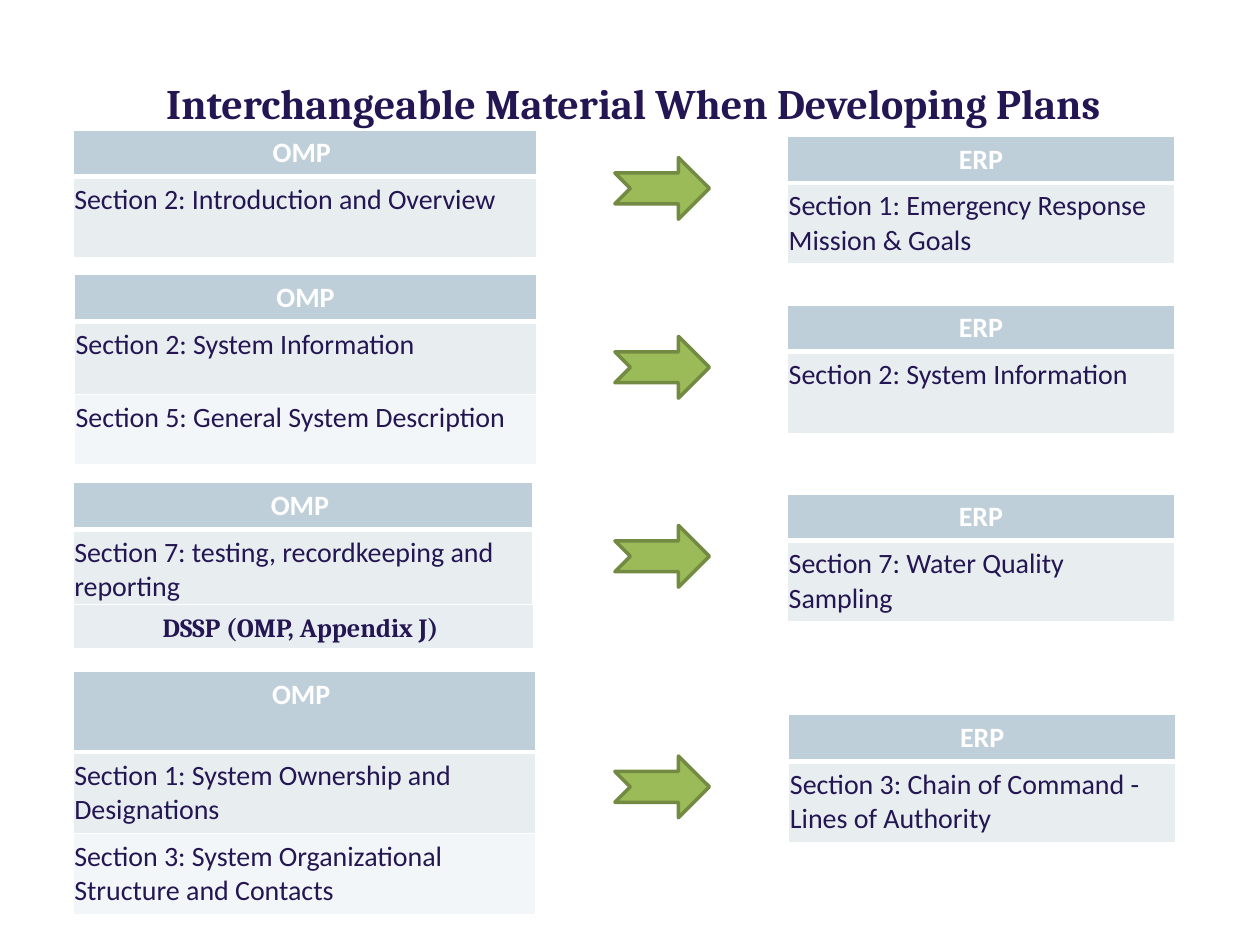
import pptx
import pptx.dml.color
import pptx.enum.shapes
import pptx.enum.text
import pptx.oxml
import pptx.oxml.ns
import pptx.util

Inches = pptx.util.Inches
Pt = pptx.util.Pt
CENTER = pptx.enum.text.PP_ALIGN.CENTER
SHAPES = pptx.enum.shapes.MSO_SHAPE

COLORS = {
    "ink": "241652",
    "white": "FFFFFF",
    "header": "BFCFD9",
    "band_dark": "E8EDF0",
    "band_light": "F3F6F8",
    "appendix": "E8EDF1",
    "arrow": "9BBB59",
    "arrow_line": "738A42",
}
THIN, THICK = 0.96, 3

PLAN_TABLES = [
    (6.25, 1.08, 3.07, [0.33, 0.64],
     ["ERP", "Section 1: Emergency Response Mission & Goals"]),
    (0.58, 1.03, 3.68, [0.33, 0.64],
     ["OMP ", "Section 2: Introduction and Overview"]),
    (0.59, 2.18, 3.67, [0.32, 0.58, 0.56],
     ["OMP", "Section 2: System Information",
      "Section 5: General System Description"]),
    (6.25, 2.42, 3.07, [0.33, 0.65],
     ["ERP", "Section 2: System Information"]),
    (0.58, 3.83, 3.65, [0.33, 0.64],
     ["OMP ", "Section 7: testing, recordkeeping and reporting"]),
    (6.25, 3.92, 3.07, [0.33, 0.64],
     ["ERP", "Section 7: Water Quality Sampling"]),
    (0.58, 5.33, 3.67, [0.64, 0.64, 0.63],
     ["OMP ", "Section 1: System Ownership and Designations",
      "Section 3: System Organizational Structure and Contacts"]),
    (6.26, 5.67, 3.07, [0.32, 0.54],
     ["ERP", "Section 3: Chain of Command - Lines of Authority"]),
]
ARROW_TOPS = [1.25, 2.67, 4.17, 6]


def rgb(name):
    return pptx.dml.color.RGBColor.from_string(COLORS[name])


def paint(item, color):
    item.fill.solid()
    item.fill.fore_color.rgb = rgb(color)


def write(frame, text, font, size, color, bold, align=None):
    frame.text = text
    para = frame.paragraphs[0]
    para.alignment = align
    span = para.runs[0].font
    span.name, span.size, span.bold = font, Pt(size), bold
    span.color.rgb = rgb(color)


def set_borders(cell, top, bottom):
    properties = cell._tc.get_or_add_tcPr()
    widths = [("lnL", THIN), ("lnR", THIN), ("lnT", top), ("lnB", bottom)]
    for position, (side, width) in enumerate(widths):
        properties.insert(position, pptx.oxml.parse_xml(
            f'<a:{side} {pptx.oxml.ns.nsdecls("a")} w="{int(Pt(width))}">'
            f'<a:solidFill><a:srgbClr val="{COLORS["white"]}"/></a:solidFill>'
            f'</a:{side}>'))


def add_plan_table(page, left, top, width, heights, texts):
    table = page.shapes.add_table(
        len(texts), 1, Inches(left), Inches(top),
        Inches(width), Inches(sum(heights))).table
    table.first_row = table.horz_banding = False
    fills = ["header", "band_dark", "band_light"]
    for index, (height, text) in enumerate(zip(heights, texts)):
        table.rows[index].height = Inches(height)
        cell = table.cell(index, 0)
        cell.margin_left = cell.margin_right = Inches(0.01)
        cell.margin_top = cell.margin_bottom = Inches(0.05)
        header = index == 0
        write(cell.text_frame, text, "Calibri", 16,
              "white" if header else "ink", header, CENTER if header else None)
        paint(cell, fills[index])
        set_borders(cell, THICK if index == 1 else THIN,
                    THICK if header else THIN)


def add_block(page, kind, place, fill, line, line_width):
    block = page.shapes.add_shape(kind, *map(Inches, place))
    block.shadow.inherit = False
    paint(block, fill)
    block.line.color.rgb = rgb(line)
    block.line.width = Pt(line_width)
    return block


def add_title(page, text):
    box = page.shapes.add_textbox(
        Inches(1.12), Inches(0.57), Inches(7.81), Inches(0.5))
    box.text_frame.word_wrap = False
    write(box.text_frame, text, "Cambria", 24, "ink", True, CENTER)


def main():
    deck = pptx.Presentation()
    deck.slide_width, deck.slide_height = Inches(10), Inches(7.5)
    page = deck.slides.add_slide(deck.slide_layouts[6])
    for plan in PLAN_TABLES:
        add_plan_table(page, *plan)
    for top in ARROW_TOPS:
        add_block(page, SHAPES.NOTCHED_RIGHT_ARROW, (4.88, top, 0.75, 0.49),
                  "arrow", "arrow_line", 2)
    add_title(page, "Interchangeable Material When Developing Plans")
    appendix = add_block(page, SHAPES.RECTANGLE, (0.58, 4.8, 3.66, 0.35),
                         "appendix", "white", 0.75)
    write(appendix.text_frame, "DSSP (OMP, Appendix J) ",
          "Cambria", 15, "ink", True, CENTER)
    deck.save("out.pptx")


if __name__ == "__main__":
    main()
